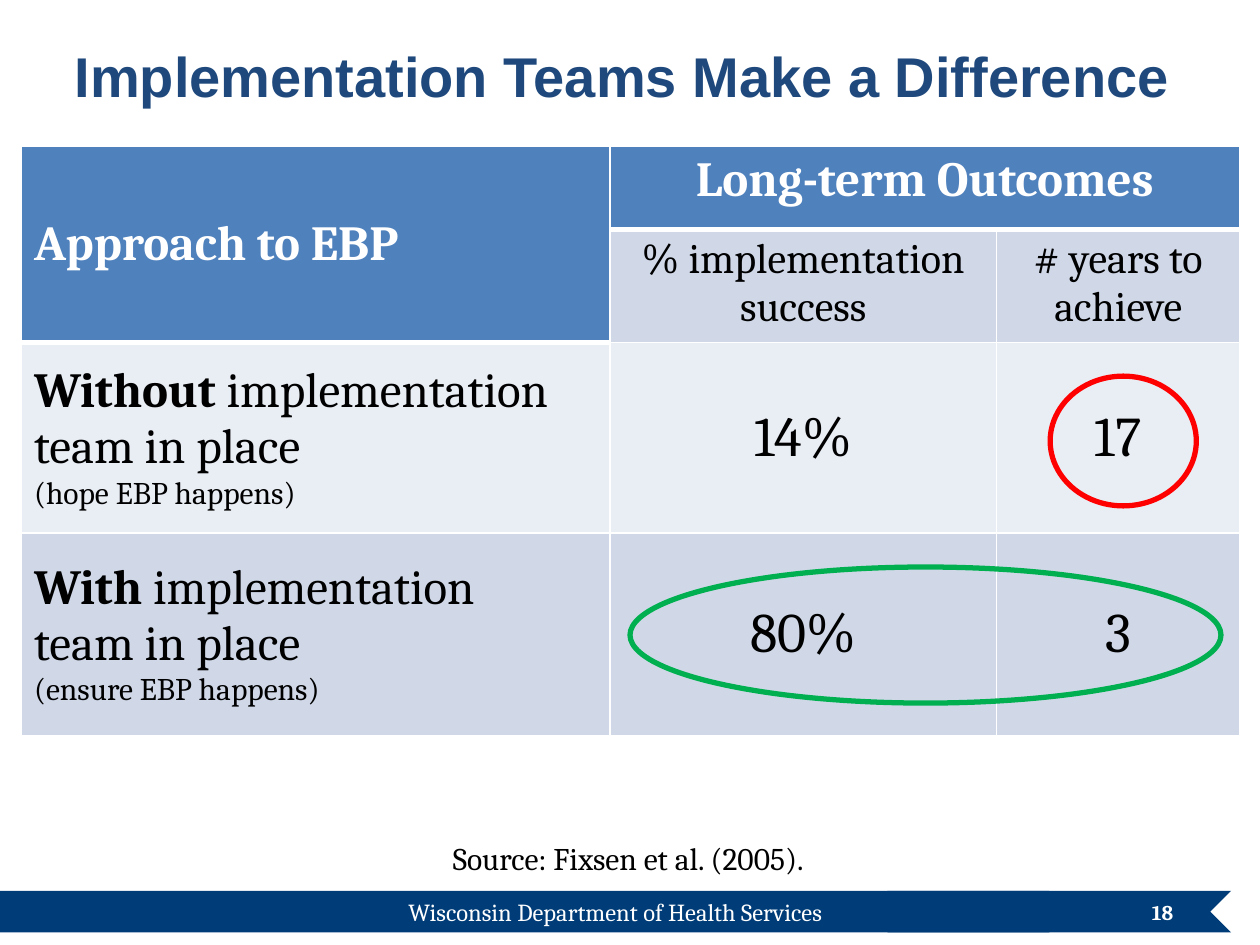
from dataclasses import dataclass

from lxml import etree
from pptx import Presentation
from pptx import util as u
from pptx.dml.color import RGBColor
from pptx.enum import shapes, text
from pptx.oxml import ns

Inches, Pt = u.Inches, u.Pt
ALIGN, ANCHOR = text.PP_ALIGN, text.MSO_ANCHOR
SHAPE = shapes.MSO_SHAPE

WHITE = RGBColor(0xFF, 0xFF, 0xFF)
BLACK = RGBColor(0, 0, 0)
NAVY = RGBColor(0x00, 0x3D, 0x78)
TITLE_BLUE = RGBColor(0x1F, 0x49, 0x7D)
HEADER_BLUE = RGBColor(0x4F, 0x81, 0xBD)
BAND_DARK = RGBColor(0xD0, 0xD8, 0xE8)
BAND_LIGHT = RGBColor(0xE9, 0xED, 0xF4)
GREEN = RGBColor(0x00, 0xB0, 0x50)
RED = RGBColor(0xFF, 0, 0)


@dataclass(frozen=True)
class Span:
    words: str
    size: int
    bold: bool = False
    color: RGBColor = BLACK
    font: str = "Cambria"


@dataclass(frozen=True)
class Cell:
    row: int
    column: int
    paras: list[list[Span]]
    align: ALIGN = ALIGN.CENTER
    anchor: ANCHOR = ANCHOR.MIDDLE


@dataclass(frozen=True)
class Label:
    place: tuple[float, float, float, float]
    span: Span
    align: ALIGN = ALIGN.CENTER
    anchor: ANCHOR = ANCHOR.TOP


@dataclass(frozen=True)
class Figure:
    kind: SHAPE
    place: tuple[float, float, float, float]
    fill: RGBColor | None = None
    line: RGBColor | None = None
    rotation: int = 0


def write(frame, paras: list[list[Span]], align: ALIGN) -> None:
    for index, spans in enumerate(paras):
        para = frame.add_paragraph() if index else frame.paragraphs[0]
        para.alignment = align
        for span in spans:
            run = para.add_run()
            run.text = span.words
            run.font.name = span.font
            run.font.size = Pt(span.size)
            run.font.bold = span.bold
            run.font.color.rgb = span.color


def draw_label(page, label: Label) -> None:
    box = page.shapes.add_textbox(*map(Inches, label.place))
    frame = box.text_frame
    frame.word_wrap = True
    frame.vertical_anchor = label.anchor
    write(frame, [[label.span]], label.align)


def draw_figure(page, figure: Figure) -> None:
    shape = page.shapes.add_shape(figure.kind, *map(Inches, figure.place))
    shape.shadow.inherit = False
    shape.rotation = figure.rotation
    if figure.fill is None:
        shape.fill.background()
    else:
        shape.fill.solid()
        shape.fill.fore_color.rgb = figure.fill
    if figure.line is None:
        shape.line.fill.background()
    else:
        shape.line.color.rgb = figure.line
        shape.line.width = Pt(3)


def add_border(cell, side: str, points: int) -> None:
    properties = cell._tc.get_or_add_tcPr()
    line = etree.SubElement(properties, ns.qn(f"a:ln{side}"), w=str(Pt(points)))
    fill = etree.SubElement(line, ns.qn("a:solidFill"))
    etree.SubElement(fill, ns.qn("a:srgbClr"), val=str(WHITE))


def draw_table(page) -> None:
    columns, rows = (4.67, 3.07, 1.93), (0.66, 0.89, 1.51, 1.61)
    table = page.shapes.add_table(
        len(rows), len(columns), Inches(0.17), Inches(1.16),
        Inches(sum(columns)), Inches(sum(rows))).table
    for column, width in zip(table.columns, columns):
        column.width = Inches(width)
    for row, height in zip(table.rows, rows):
        row.height = Inches(height)
    table.cell(0, 0).merge(table.cell(1, 0))
    table.cell(0, 1).merge(table.cell(0, 2))

    # Fills and borders, with a heavy rule under the header cells
    bands = (HEADER_BLUE, BAND_DARK, BAND_LIGHT, BAND_DARK)
    for row, band in enumerate(bands):
        for column in range(len(columns)):
            cell = table.cell(row, column)
            last_header_row = 0 if column else 1
            add_border(cell, "L", 1)
            add_border(cell, "R", 1)
            add_border(cell, "T", 3 if row == last_header_row + 1 else 1)
            add_border(cell, "B", 3 if row == last_header_row else 1)
            cell.fill.solid()
            cell.fill.fore_color.rgb = HEADER_BLUE if row <= last_header_row else band

    for item in CELLS:
        cell = table.cell(item.row, item.column)
        cell.vertical_anchor = item.anchor
        write(cell.text_frame, item.paras, item.align)


CELLS = [
    Cell(0, 0, [[Span("Approach to EBP", 28, True, WHITE)]], ALIGN.LEFT),
    Cell(0, 1, [[Span("Long-term Outcomes", 28, True, WHITE)]], anchor=ANCHOR.TOP),
    Cell(1, 1, [[Span("% implementation success", 24)]], anchor=ANCHOR.TOP),
    Cell(1, 2, [[Span("# years to achieve", 24)]], anchor=ANCHOR.TOP),
    Cell(2, 0, [[Span("Without ", 28, True), Span("implementation team in place", 28)],
                [Span("(hope EBP happens)", 18)]], ALIGN.LEFT),
    Cell(2, 1, [[Span("14%", 32)]]),
    Cell(2, 2, [[Span("17", 32)]]),
    Cell(3, 0, [[Span("With ", 28, True), Span("implementation", 28)],
                [Span("team in place", 28)],
                [Span("(ensure EBP happens)", 18)]], ALIGN.LEFT),
    Cell(3, 1, [[Span("80%", 32)]]),
    Cell(3, 2, [[Span("3", 32)]]),
]
FOOTER_BAND = [
    Figure(SHAPE.CHEVRON, (6.88, 7.07, 2.89, 0.33), fill=NAVY, rotation=180),
    Figure(SHAPE.RECTANGLE, (-0.33, 7.07, 8.66, 0.33), fill=NAVY),
]
HIGHLIGHTS = [
    Figure(SHAPE.OVAL, (5, 4.5, 4.69, 1.08), line=GREEN),
    Figure(SHAPE.OVAL, (8.4, 2.92, 1.03, 1.16), line=RED, rotation=270),
]
FOOTER_LABELS = [
    Label((0, 7.07, 9.77, 0.34),
          Span("Wisconsin Department of Health Services", 14, color=WHITE)),
    Label((7.08, 7.04, 2.33, 0.4), Span("18", 12, True, WHITE),
          ALIGN.RIGHT, ANCHOR.MIDDLE),
]
BODY_LABELS = [
    Label((0.89, 6.61, 8.24, 0.4), Span("Source: Fixsen et al. (2005). ", 18)),
    Label((0.33, 0.03, 9.22, 1.13),
          Span("Implementation Teams Make a Difference", 32, True, TITLE_BLUE, "Arial"),
          anchor=ANCHOR.MIDDLE),
]


def main() -> None:
    deck = Presentation()
    deck.slide_width, deck.slide_height = Inches(10), Inches(7.5)
    page = deck.slides.add_slide(deck.slide_layouts[6])

    # Footer
    for figure in FOOTER_BAND:
        draw_figure(page, figure)
    for label in FOOTER_LABELS:
        draw_label(page, label)

    # Outcomes table with its highlighted results
    draw_table(page)
    for figure in HIGHLIGHTS:
        draw_figure(page, figure)

    # Source note and title
    for label in BODY_LABELS:
        draw_label(page, label)

    deck.save("out.pptx")


if __name__ == "__main__":
    main()
